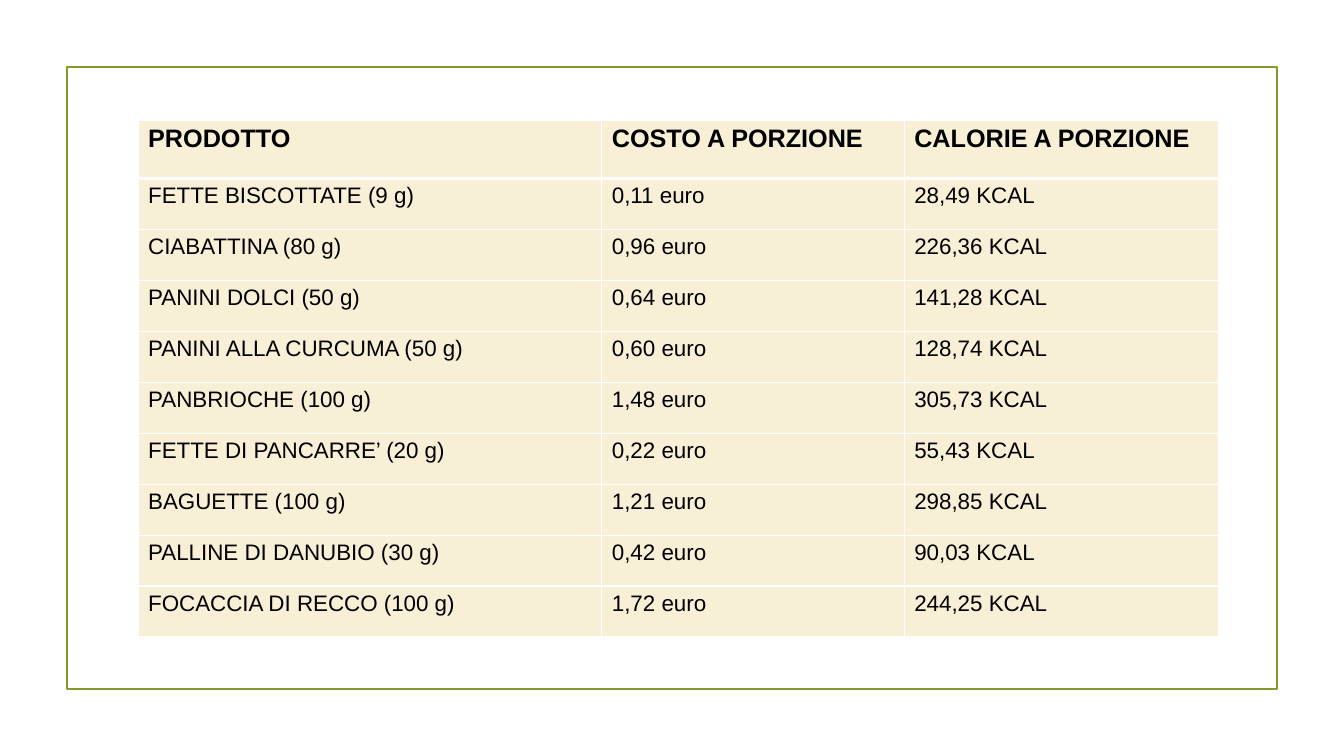
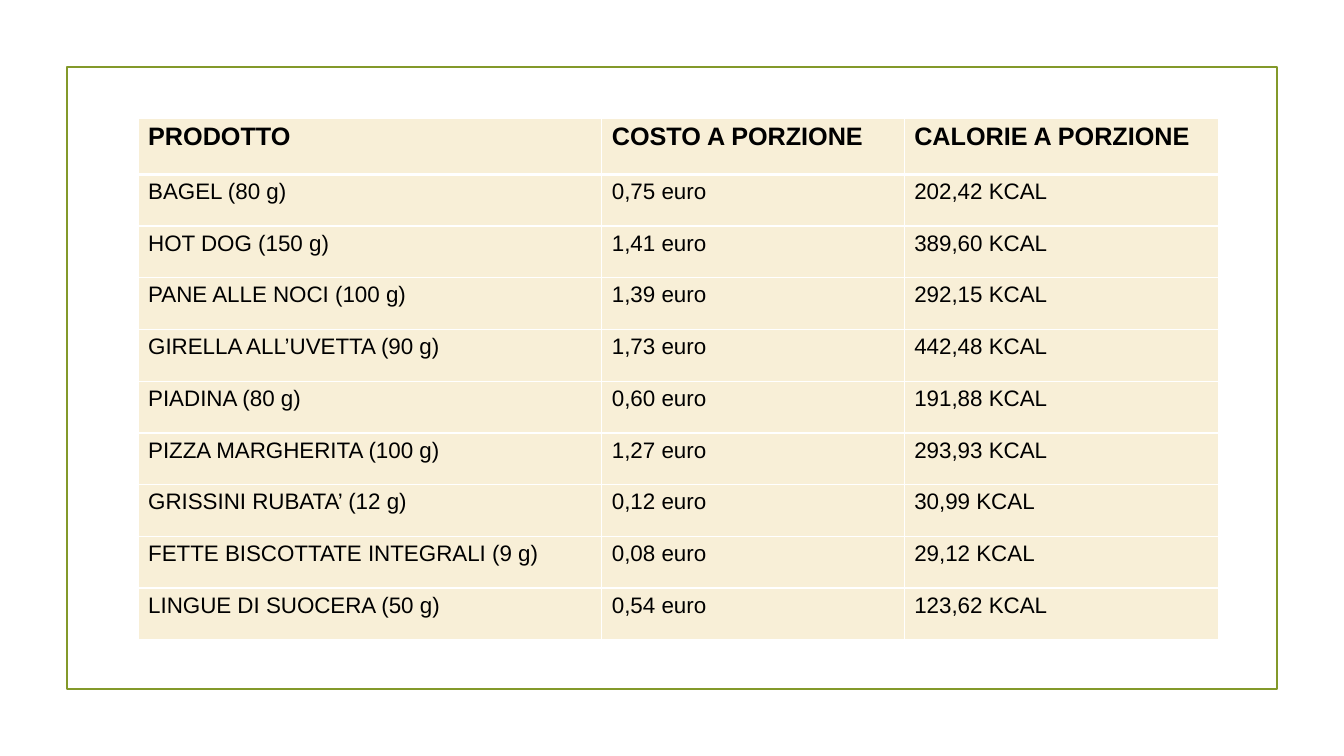
from dataclasses import dataclass

import lxml.etree
import pptx
import pptx.dml.color
import pptx.enum.shapes
import pptx.oxml.ns
import pptx.presentation
import pptx.slide
import pptx.table
import pptx.util

RGB = pptx.dml.color.RGBColor


@dataclass(frozen=True)
class Theme:
    frame: RGB = RGB.from_string("83992A")
    cell: RGB = RGB.from_string("F8EFD7")
    rule: RGB = RGB.from_string("FFFFFF")
    text: RGB = RGB.from_string("000000")
    font: str = "Arial"
    header_size: int = 18
    body_size: int = 16
    frame_line: float = 1.25
    thin_rule: int = 1
    header_rule: int = 3


@dataclass(frozen=True)
class Product:
    name: str
    cost: str
    calories: str

    def texts(self) -> tuple[str, str, str]:
        return self.name, f"{self.cost} euro", f"{self.calories} KCAL"


@dataclass(frozen=True)
class PriceTable:
    """Vertical measures are in grid units."""
    top: float
    header_height: float
    body_height: float
    products: tuple[Product, ...]


THEME = Theme()
GRID_COLUMNS = 80
GRID_ROWS = 45
SLIDE_WIDTH = pptx.util.Inches(13.33)
SLIDE_HEIGHT = pptx.util.Inches(7.5)
FRAME_MARGIN = 4
FRAME_COLUMNS = 72
FRAME_ROWS = 37
TABLE_LEFT = 8.22
TABLE_COLUMNS = (27.6, 18, 18.72)
HEADINGS = ("PRODOTTO", "COSTO A PORZIONE", "CALORIE A PORZIONE")

PRICE_TABLES = (
    PriceTable(7.14, 3.48, 27.3, (
        Product("FETTE BISCOTTATE (9 g)", "0,11", "28,49"),
        Product("CIABATTINA (80 g)", "0,96", "226,36"),
        Product("PANINI DOLCI (50 g)", "0,64", "141,28"),
        Product("PANINI ALLA CURCUMA (50 g)", "0,60", "128,74"),
        Product("PANBRIOCHE (100 g)", "1,48", "305,73"),
        Product("FETTE DI PANCARRE’ (20 g)", "0,22", "55,43"),
        Product("BAGUETTE (100 g)", "1,21", "298,85"),
        Product("PALLINE DI DANUBIO (30 g)", "0,42", "90,03"),
        Product("FOCACCIA DI RECCO (100 g)", "1,72", "244,25"),
    )),
    PriceTable(7.02, 3.36, 27.72, (
        Product("BAGEL (80 g)", "0,75", "202,42"),
        Product("HOT DOG (150 g)", "1,41", "389,60"),
        Product("PANE ALLE NOCI (100 g)", "1,39", "292,15"),
        Product("GIRELLA ALL’UVETTA (90 g)", "1,73", "442,48"),
        Product("PIADINA (80 g)", "0,60", "191,88"),
        Product("PIZZA MARGHERITA (100 g)", "1,27", "293,93"),
        Product("GRISSINI RUBATA’ (12 g)", "0,12", "30,99"),
        Product("FETTE BISCOTTATE INTEGRALI (9 g)", "0,08", "29,12"),
        Product("LINGUE DI SUOCERA (50 g)", "0,54", "123,62"),
    )),
)


def across(columns: float) -> int:
    return round(SLIDE_WIDTH * columns / GRID_COLUMNS)


def down(rows: float) -> int:
    return round(SLIDE_HEIGHT * rows / GRID_ROWS)


def add_frame(s: pptx.slide.Slide) -> None:
    frame = s.shapes.add_shape(
        pptx.enum.shapes.MSO_SHAPE.RECTANGLE,
        across(FRAME_MARGIN), down(FRAME_MARGIN),
        across(FRAME_COLUMNS), down(FRAME_ROWS))
    frame.shadow.inherit = False
    frame.fill.background()
    frame.line.color.rgb = THEME.frame
    frame.line.width = pptx.util.Pt(THEME.frame_line)


def set_borders(cell: pptx.table._Cell, top: int, bottom: int) -> None:
    """Rule all four sides; widths are in points."""
    qn = pptx.oxml.ns.qn
    tcPr = cell._tc.get_or_add_tcPr()
    widths = {"L": THEME.thin_rule, "R": THEME.thin_rule, "T": top, "B": bottom}
    for i, (side, width) in enumerate(widths.items()):
        ln = lxml.etree.Element(qn(f"a:ln{side}"), w=str(pptx.util.Pt(width)))
        fill = lxml.etree.SubElement(ln, qn("a:solidFill"))
        lxml.etree.SubElement(fill, qn("a:srgbClr"), val=str(THEME.rule))
        tcPr.insert(i, ln)


def fill_cell(cell: pptx.table._Cell, text: str, row: int) -> None:
    is_header = row == 0
    cell.fill.solid()
    cell.fill.fore_color.rgb = THEME.cell
    set_borders(cell,
                top=THEME.header_rule if row == 1 else THEME.thin_rule,
                bottom=THEME.header_rule if is_header else THEME.thin_rule)
    r = cell.text_frame.paragraphs[0].add_run()
    r.text = text
    r.font.name = THEME.font
    r.font.size = pptx.util.Pt(THEME.header_size if is_header else THEME.body_size)
    r.font.bold = is_header
    r.font.color.rgb = THEME.text


def add_price_table(s: pptx.slide.Slide, prices: PriceTable) -> None:
    rows = (HEADINGS, *(product.texts() for product in prices.products))
    table = s.shapes.add_table(
        len(rows), len(HEADINGS), across(TABLE_LEFT), down(prices.top),
        across(sum(TABLE_COLUMNS)),
        down(prices.header_height + prices.body_height)).table
    table.horz_banding = False
    for column, width in zip(table.columns, TABLE_COLUMNS):
        column.width = across(width)
    body_row = prices.body_height / len(prices.products)
    for i, texts in enumerate(rows):
        table.rows[i].height = down(body_row if i else prices.header_height)
        for j, text in enumerate(texts):
            fill_cell(table.cell(i, j), text, i)


def add_price_slide(prs: pptx.presentation.Presentation, prices: PriceTable) -> None:
    s = prs.slides.add_slide(prs.slide_layouts[6])
    add_frame(s)
    add_price_table(s, prices)


def main() -> None:
    prs = pptx.Presentation()
    prs.slide_width, prs.slide_height = SLIDE_WIDTH, SLIDE_HEIGHT
    for prices in PRICE_TABLES:
        add_price_slide(prs, prices)
    prs.save("out.pptx")


if __name__ == "__main__":
    main()
